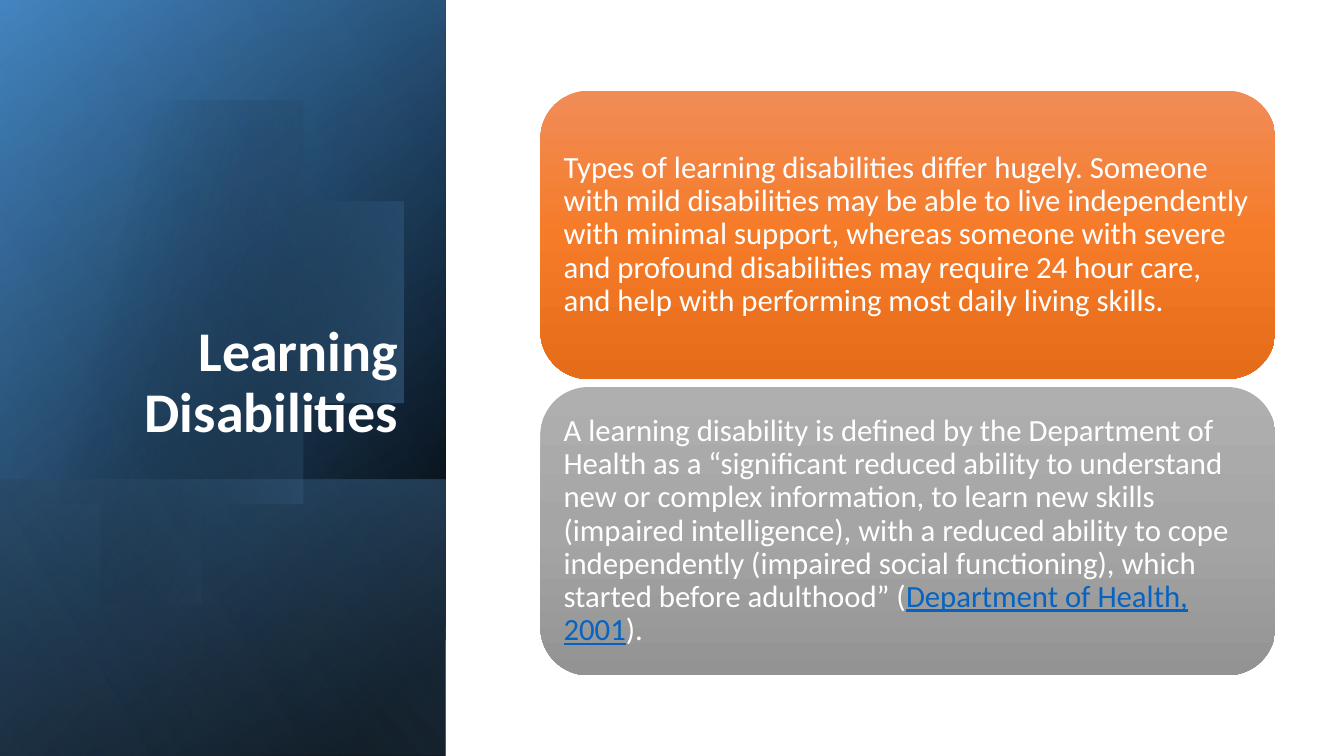
import math

from pptx import Presentation
from pptx import util as u
from pptx.dml.color import RGBColor
from pptx.enum import shapes, text
from pptx.oxml import parse_xml
from pptx.oxml.ns import nsdecls, qn

WIDTH, HEIGHT = 13.33, 7.5
SIDE_WIDTH = 4.42
FONT = "Calibri"
BLACK, BLUE, WHITE, LINK = "000000", "5B9BD5", "FFFFFF", "0563C1"

DIFFERENCES = [
    ("Types of learning disabilities differ hugely. Someone with mild "
     "disabilities may be able to live independently with minimal support, "
     "whereas someone with severe and profound disabilities may require 24 "
     "hour care, and help with performing most daily living skills.", WHITE),
]
DEFINITION = [
    ("A learning disability is defined by the Department of Health as a "
     "“significant reduced ability to understand new or complex information, "
     "to learn new skills (impaired intelligence), with a reduced ability to "
     "cope independently (impaired social functioning), which started before "
     "adulthood” (", WHITE),
    ("Department of Health, 2001", LINK),
    (").", WHITE),
]
CARDS = [
    (DIFFERENCES, [(0, "F18C57", 100), (50, "F67B28", 100), (100, "E56C19", 100)]),
    (DEFINITION, [(0, "AFAFAF", 100), (50, "A5A5A5", 100), (100, "939393", 100)]),
]


def color(hex_string):
    """Return the colour for a hex string."""
    return RGBColor.from_string(hex_string)


def paint(shape, stops, angle):
    """Fill a shape with a linear gradient of (position, colour, opacity) stops."""
    shape.shadow.inherit = False
    shape.line.fill.background()
    shape.fill.background()
    stop_xml = "".join(
        f'<a:gs pos="{position * 1000}"><a:srgbClr val="{color(tint)}">'
        f'<a:alpha val="{opacity * 1000}"/></a:srgbClr></a:gs>'
        for position, tint, opacity in stops)
    gradient = parse_xml(
        f'<a:gradFill {nsdecls("a")} rotWithShape="1"><a:gsLst>{stop_xml}</a:gsLst>'
        f'<a:lin ang="{angle * 60000}" scaled="0"/></a:gradFill>')
    properties = shape._element.spPr
    properties.replace(properties.find(qn("a:noFill")), gradient)


def add_veil(slide, top, height, stops, angle):
    """Cover the side panel from top with a mirrored, quarter-turned gradient."""
    offset = (SIDE_WIDTH - height) / 2
    veil = slide.shapes.add_shape(
        shapes.MSO_SHAPE.RECTANGLE, u.Inches(offset), u.Inches(top - offset),
        u.Inches(height), u.Inches(SIDE_WIDTH))
    veil.rotation = 90
    veil._element.spPr.xfrm.set("flipH", "1")
    paint(veil, stops, angle)


def add_disc(slide, center_x, center_y, radius):
    """Draw a translucent disc cut off by the left edge of the slide."""
    reach = math.acos(-center_x / radius)
    steps = 120
    angles = [reach * (2 * step / steps - 1) for step in range(steps + 1)]
    rim = [(center_x + radius * math.cos(a), center_y + radius * math.sin(a))
           for a in angles]
    outline = slide.shapes.build_freeform(*rim[0], scale=u.Inches(1))
    outline.add_line_segments(rim[1:], close=True)
    paint(outline.convert_to_shape(), [(29, BLACK, 0), (100, BLUE, 43)], 14)


def add_side_panel(slide):
    """Build the layered blue panel on the left."""
    add_veil(slide, 0, HEIGHT, [(8, BLACK, 100), (100, "2E75B6", 100)], 50)
    add_veil(slide, 0, HEIGHT, [(0, BLACK, 0), (99, BLUE, 46)], 30)
    add_veil(slide, 4.76, HEIGHT - 4.76, [(2, BLUE, 29), (100, BLACK, 30)], 130)
    add_disc(slide, 1.43, 3.39, 2.29)
    add_veil(slide, 0, HEIGHT, [(0, BLACK, 0), (99, "9DC3E6", 11)], 120)


def style(run, size, tint):
    """Set the font, size and colour of a run."""
    run.font.name, run.font.size = FONT, u.Pt(size)
    run.font.color.rgb = color(tint)


def place_title(slide, left, top, width, height):
    """Set the title over the side panel."""
    title = slide.shapes.title
    title.left, title.top = u.Inches(left), u.Inches(top)
    title.width, title.height = u.Inches(width), u.Inches(height)
    frame = title.text_frame
    frame.text = "Learning Disabilities"
    frame.word_wrap = True
    frame.auto_size = text.MSO_AUTO_SIZE.NONE
    frame.vertical_anchor = text.MSO_ANCHOR.BOTTOM
    heading = frame.paragraphs[0]
    heading.alignment = text.PP_ALIGN.RIGHT
    heading.line_spacing = 0.9
    style(heading.runs[0], 40, WHITE)
    heading.runs[0].font.bold = True
    tree = slide.shapes._spTree
    tree.remove(title._element)
    tree.append(title._element)


def add_card(slide, left, top, width, height, passages, stops):
    """Add one rounded card with its statement."""
    card = slide.shapes.add_shape(
        shapes.MSO_SHAPE.ROUNDED_RECTANGLE, u.Inches(left), u.Inches(top),
        u.Inches(width), u.Inches(height))
    paint(card, stops, 90)
    frame = card.text_frame
    frame.word_wrap = True
    frame.vertical_anchor = text.MSO_ANCHOR.MIDDLE
    frame.margin_left = frame.margin_right = u.Inches(0.09)
    frame.margin_top = frame.margin_bottom = u.Inches(0.09)
    statement = frame.paragraphs[0]
    statement.alignment = text.PP_ALIGN.LEFT
    statement.line_spacing = 0.9
    for wording, tint in passages:
        run = statement.add_run()
        run.text = wording
        style(run, 22, tint)
        run.font.underline = tint == LINK


def add_cards(slide, left, top, width, height, gap):
    """Stack the cards in equal rows within the given box."""
    row = (height - gap * (len(CARDS) - 1)) / len(CARDS)
    for index, (passages, stops) in enumerate(CARDS):
        add_card(slide, left, top + index * (row + gap), width, row, passages, stops)


def main():
    """Build and save the slide."""
    deck = Presentation()
    deck.slide_width, deck.slide_height = u.Inches(WIDTH), u.Inches(HEIGHT)
    slide = deck.slides.add_slide(deck.slide_layouts[5])
    add_side_panel(slide)
    place_title(slide, 0.64, 1.84, 3.41, 2.62)
    add_cards(slide, 5.36, 0.9, 7.29, 5.8, 0.08)
    deck.save("out.pptx")


if __name__ == "__main__":
    main()
